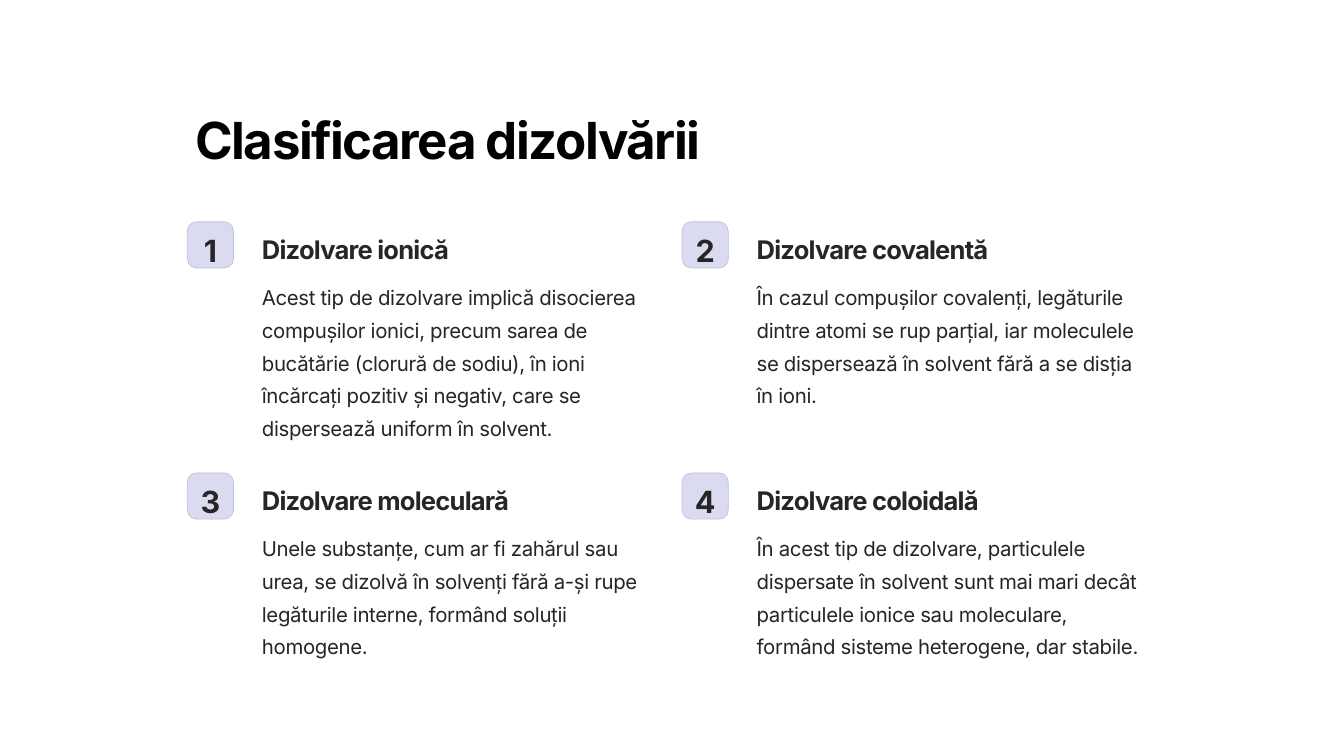
from dataclasses import dataclass

from pptx import Presentation
from pptx.dml.color import RGBColor
from pptx.enum.shapes import MSO_SHAPE
from pptx.enum.text import PP_ALIGN
from pptx.util import Inches, Pt

ROUNDED = MSO_SHAPE.ROUNDED_RECTANGLE
LEFT = PP_ALIGN.LEFT
CENTER = PP_ALIGN.CENTER


@dataclass(frozen=True)
class TextStyle:
    """Type settings for one level of text, in points."""
    size: float
    leading: float
    tracking: float
    color: str
    bold: bool = True
    align: PP_ALIGN = LEFT


@dataclass(frozen=True)
class Theme:
    """Colours and type of the slide."""
    font: str = "Inter"
    background: str = "FFFFFF"
    badge_fill: str = "DADBF1"
    badge_line: str = "C0C1D7"
    title: TextStyle = TextStyle(43.7, 54.7, -1.3, "000000")
    number: TextStyle = TextStyle(26.2, 32.8, -0.8, "272525", align=CENTER)
    heading: TextStyle = TextStyle(21.9, 27.3, -0.7, "272525")
    body: TextStyle = TextStyle(17.5, 28, -0.3, "272525", bold=False)


THEME = Theme()
COLUMNS = (2.23, 8.12)
ROWS = (2.64, 5.63)
BADGE_SIZE = 0.55
TEXT_INDENT = 0.79

DISSOLUTION_TYPES = (
    ("Dizolvare ionică",
     "Acest tip de dizolvare implică disocierea compușilor ionici, precum "
     "sarea de bucătărie (clorură de sodiu), în ioni încărcați pozitiv și "
     "negativ, care se dispersează uniform în solvent."),
    ("Dizolvare covalentă",
     "În cazul compușilor covalenți, legăturile dintre atomi se rup parțial, "
     "iar moleculele se dispersează în solvent fără a se disția în ioni."),
    ("Dizolvare moleculară",
     "Unele substanțe, cum ar fi zahărul sau urea, se dizolvă în solvenți "
     "fără a-și rupe legăturile interne, formând soluții homogene."),
    ("Dizolvare coloidală",
     "În acest tip de dizolvare, particulele dispersate în solvent sunt mai "
     "mari decât particulele ionice sau moleculare, formând sisteme "
     "heterogene, dar stabile."),
)


def rgb(value):
    """Return the colour for a hex value."""
    return RGBColor.from_string(value)


def add_text(slide, text, style, left, top, width, height):
    """Add a text box in the given style."""
    frame = slide.shapes.add_textbox(
        Inches(left), Inches(top), Inches(width), Inches(height)).text_frame
    frame.word_wrap = True
    paragraph = frame.paragraphs[0]
    paragraph.alignment = style.align
    paragraph.line_spacing = Pt(style.leading)
    run = paragraph.add_run()
    run.text = text
    font_format = {"name": THEME.font, "size": Pt(style.size), "bold": style.bold}
    for attribute, value in font_format.items():
        setattr(run.font, attribute, value)
    run.font.color.rgb = rgb(style.color)
    run.font._element.set("spc", str(round(style.tracking * 100)))


def add_badge(slide, number, left, top):
    """Add a rounded badge with its number."""
    badge = slide.shapes.add_shape(
        ROUNDED, Inches(left), Inches(top), Inches(BADGE_SIZE), Inches(BADGE_SIZE))
    badge.adjustments[0] = 0.2
    badge.shadow.inherit = False
    badge.fill.solid()
    badge.fill.fore_color.rgb = rgb(THEME.badge_fill)
    badge.line.color.rgb = rgb(THEME.badge_line)
    badge.line.width = Pt(0.6)
    add_text(slide, str(number), THEME.number, left, top + 0.05, BADGE_SIZE, 0.46)


def add_dissolution_type(slide, number, heading, body, left, top):
    """Add one numbered entry with its heading and explanation."""
    add_badge(slide, number, left, top)
    text_left = left + TEXT_INDENT
    add_text(slide, heading, THEME.heading, text_left, top + 0.08, 3.4, 0.38)
    add_text(slide, body, THEME.body, text_left, top + 0.61, 4.86, 1.94)


def main():
    """Build and save the slide."""
    presentation = Presentation()
    presentation.slide_width = Inches(16)
    presentation.slide_height = Inches(9)
    slide = presentation.slides.add_slide(presentation.slide_layouts[6])
    slide.background.fill.solid()
    slide.background.fill.fore_color.rgb = rgb(THEME.background)

    add_text(slide, "Clasificarea dizolvării", THEME.title,
             COLUMNS[0], 1.21, 6.6, 0.76)
    for index, (heading, body) in enumerate(DISSOLUTION_TYPES):
        row, column = divmod(index, len(COLUMNS))
        add_dissolution_type(slide, index + 1, heading, body,
                             COLUMNS[column], ROWS[row])
    presentation.save("out.pptx")


if __name__ == "__main__":
    main()
